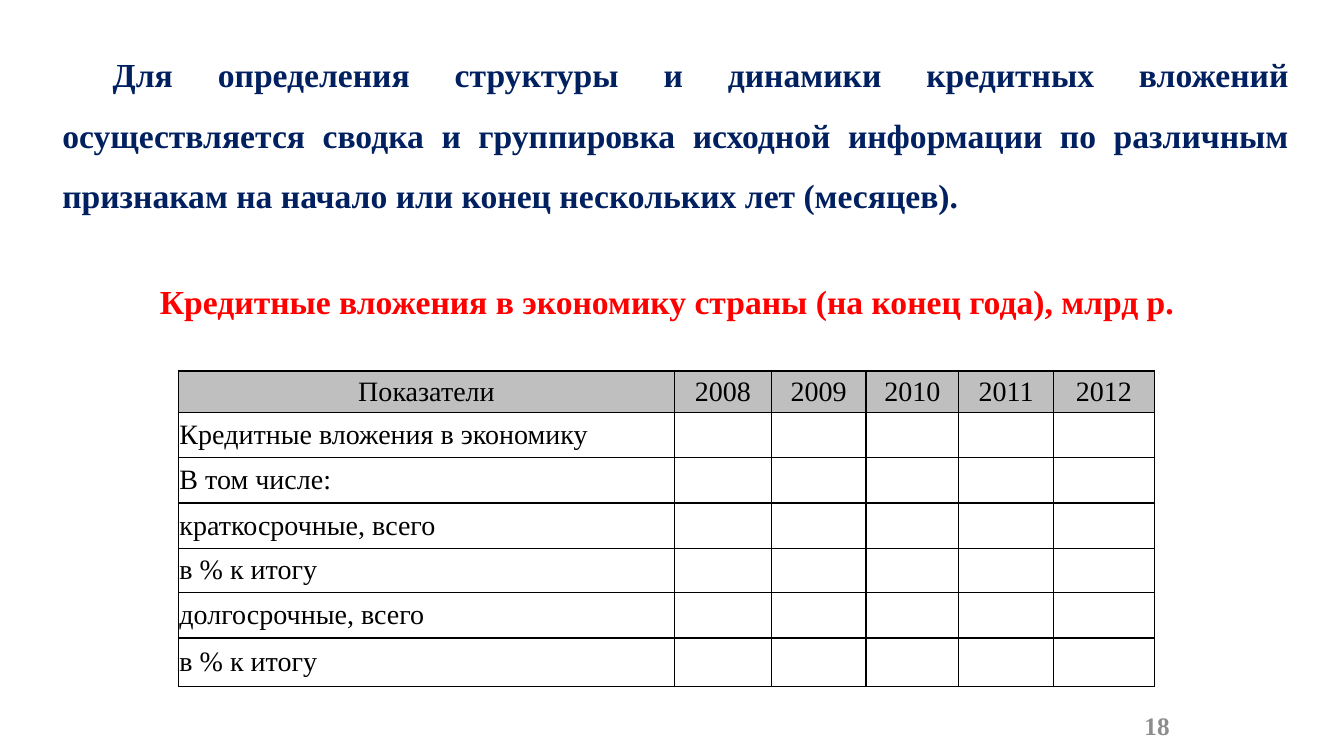
from lxml import etree
from pptx import Presentation
from pptx.dml.color import RGBColor
from pptx.enum.text import MSO_ANCHOR, MSO_AUTO_SIZE, PP_ALIGN
from pptx.oxml.ns import qn
from pptx.util import Inches, Pt

LEFT, MID, RIGHT, JUST = PP_ALIGN.LEFT, PP_ALIGN.CENTER, PP_ALIGN.RIGHT, PP_ALIGN.JUSTIFY
TOP, CENTRE = MSO_ANCHOR.TOP, MSO_ANCHOR.MIDDLE
FONT = "Times New Roman"
COLORS = {"navy": "002060", "red": "FF0000", "gray": "8C8C8C",
          "black": "000000", "head": "BFBFBF", "white": "FFFFFF"}

INTRO = ("Для определения структуры и динамики кредитных вложений осуществляется "
         "сводка и группировка исходной информации по различным признакам "
         "на начало или конец нескольких лет (месяцев).")
TITLE = "Кредитные вложения в экономику страны (на конец года), млрд р."
PAGE = "18"
HEADER = ["Показатели", "2008", "2009", "2010", "2011", "2012"]
LABELS = ["Кредитные вложения в экономику", "В том числе:", "краткосрочные, всего",
          "в % к итогу", "долгосрочные, всего", "в % к итогу"]
ROWS = [HEADER] + [[label] + [""] * (len(HEADER) - 1) for label in LABELS]
WIDTHS = [4.92, 0.96, 0.94, 0.92, 0.94, 1]
HEIGHTS = [0.41, 0.45, 0.45, 0.45, 0.44, 0.45, 0.48]


def color(name):
    return RGBColor.from_string(COLORS[name])


def write(frame, text, size, tint, align, bold):
    para = frame.paragraphs[0]
    para.alignment = align
    run = para.add_run()
    run.text = text
    font = run.font
    font.name, font.size, font.bold = FONT, Pt(size), bold
    font.color.rgb = color(tint)
    return para


def place(shape, box, text, size, tint, align, anchor):
    shape.left, shape.top, shape.width, shape.height = map(Inches, box)
    frame = shape.text_frame
    frame.word_wrap = True
    frame.auto_size = MSO_AUTO_SIZE.NONE
    frame.vertical_anchor = anchor
    return write(frame, text, size, tint, align, True)


def indent(para):
    para.line_spacing = 1.5
    props = para._p.get_or_add_pPr()
    props.set("marL", "0")
    props.set("indent", str(Inches(0.5)))


def border(cell):
    props = cell._tc.get_or_add_tcPr()
    for side in ("lnL", "lnR", "lnT", "lnB"):
        line = etree.SubElement(props, qn("a:" + side), w=str(Pt(1)))
        fill = etree.SubElement(line, qn("a:solidFill"))
        etree.SubElement(fill, qn("a:srgbClr"), val=COLORS["black"])


def build_table(slide):
    frame = slide.shapes.add_table(
        len(ROWS), len(HEADER), Inches(1.77), Inches(3.68),
        Inches(sum(WIDTHS)), Inches(sum(HEIGHTS)))
    table = frame.table
    table.first_row = table.horz_banding = False
    for col, width in zip(table.columns, WIDTHS):
        col.width = Inches(width)
    for r, (row, height) in enumerate(zip(ROWS, HEIGHTS)):
        table.rows[r].height = Inches(height)
        for c, text in enumerate(row):
            cell = table.cell(r, c)
            cell.vertical_anchor = CENTRE
            cell.margin_left = cell.margin_right = Inches(0.01)
            cell.margin_top = cell.margin_bottom = 0
            border(cell)
            cell.fill.solid()
            cell.fill.fore_color.rgb = color("white" if r else "head")
            if text:
                write(cell.text_frame, text, 20, "black", LEFT if r else MID, False)


def main():
    deck = Presentation()
    deck.slide_width, deck.slide_height = Inches(13.33), Inches(7.5)
    slide = deck.slides.add_slide(deck.slide_layouts[5])

    def box():
        return slide.shapes.add_textbox(0, 0, 0, 0)

    place(box(), (9.37, 6.95, 2.33, 0.5), PAGE, 18, "gray", RIGHT, CENTRE)
    indent(place(box(), (0.52, 0.29, 12.36, 1.92), INTRO, 24, "navy", JUST, TOP))
    indent(place(slide.shapes.title, (0.5, 2.54, 11.73, 0.71), TITLE, 24, "red", MID, TOP))
    build_table(slide)
    deck.save("out.pptx")


if __name__ == "__main__":
    main()
